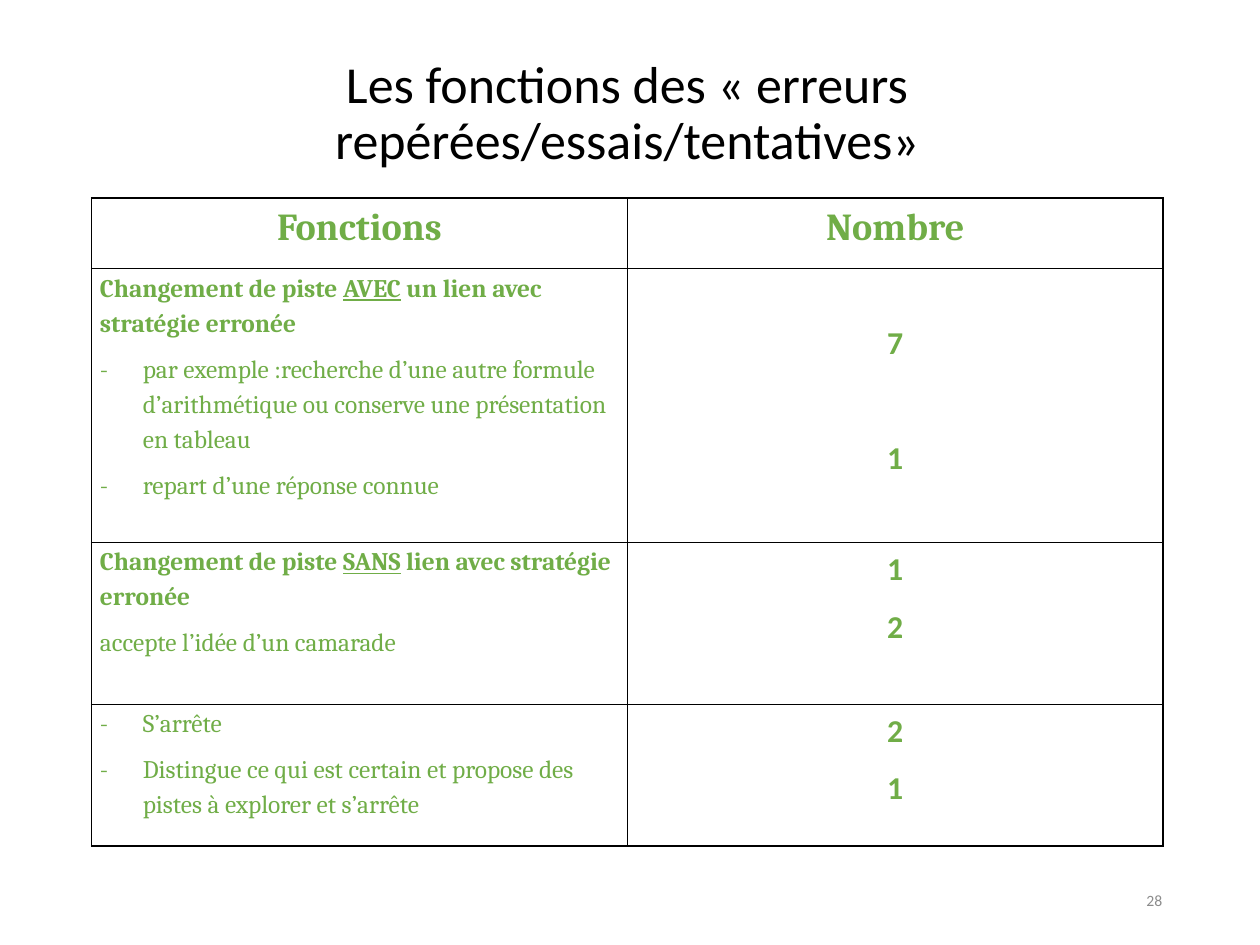
"""Builds the slide on the functions of spotted errors, with its table of counts."""
import pptx
import pptx.dml.color
import pptx.enum.text
import pptx.oxml
import pptx.oxml.ns
import pptx.util
from lxml import etree

Pt = pptx.util.Pt
ALIGN = pptx.enum.text.PP_ALIGN
BLACK = pptx.dml.color.RGBColor(0x00, 0x00, 0x00)
GREEN = pptx.dml.color.RGBColor(0x70, 0xAD, 0x47)
GREY = pptx.dml.color.RGBColor(0x8C, 0x8C, 0x8C)


def add_span(para, text, font, size, color, bold=False, underline=False):
    span = para.add_run()
    span.text = text
    span.font.name = font
    span.font.size = Pt(size)
    span.font.color.rgb = color
    span.font.bold = bold
    span.font.underline = underline


def fill_cell(cell, paras, font, size, align):
    cell.fill.background()
    cell.margin_left = cell.margin_right = Pt(5.4)
    cell.margin_top = cell.margin_bottom = 0
    frame = cell.text_frame
    for index, (kind, spans) in enumerate(paras):
        para = frame.paragraphs[0] if index == 0 else frame.add_paragraph()
        para.alignment = align
        para.line_spacing = 1.2
        para.space_after = Pt(7)
        if kind == "item":
            properties = para._p.get_or_add_pPr()
            properties.set("marL", str(Pt(27)))
            properties.set("indent", str(Pt(-27)))
            bullet_font = etree.SubElement(properties, pptx.oxml.ns.qn("a:buFont"))
            bullet_font.set("typeface", font)
            bullet = etree.SubElement(properties, pptx.oxml.ns.qn("a:buChar"))
            bullet.set("char", "-")
        for number, text in enumerate(spans):
            add_span(para, text, font, size, GREEN, kind == "bold", number == 1)
    cell_properties = cell._tc.get_or_add_tcPr()
    for position, side in enumerate(("lnL", "lnR", "lnT", "lnB")):
        border = pptx.oxml.parse_xml(
            f'<a:{side} {pptx.oxml.ns.nsdecls("a")} w="{Pt(1)}"><a:solidFill>'
            f'<a:srgbClr val="{BLACK}"/></a:solidFill></a:{side}>')
        cell_properties.insert(position, border)


deck = pptx.Presentation()
deck.slide_width = Pt(793.75)
deck.slide_height = Pt(595.25)
page = deck.slides.add_slide(deck.slide_layouts[6])

captions = [
    ("Les fonctions des « erreurs repérées/essais/tentatives»",
     (38.2, 36.3, 714.2, 71.5), 32.7, BLACK, ALIGN.CENTER, 0.9),
    ("28", (560.6, 551.5, 178.6, 31.7), 9.9, GREY, ALIGN.RIGHT, 1.0),
]
for text, place, size, color, align, spacing in captions:
    box = page.shapes.add_textbox(*(Pt(length) for length in place))
    frame = box.text_frame
    frame.word_wrap = True
    frame.vertical_anchor = pptx.enum.text.MSO_ANCHOR.MIDDLE
    para = frame.paragraphs[0]
    para.alignment = align
    para.line_spacing = spacing
    add_span(para, text, "Calibri", size, color)

headings = ["Fonctions", "Nombre"]
functions = [
    ([("bold", ["Changement de piste ", "AVEC", " un lien avec stratégie erronée"]),
      ("item", ["par exemple :recherche d’une autre formule d’arithmétique "
                "ou conserve une présentation en tableau"]),
      ("item", ["repart d’une réponse connue"])], ["7", "1"]),
    ([("bold", ["Changement de piste ", "SANS", " lien avec stratégie erronée"]),
      ("plain", ["accepte l’idée d’un camarade"])], ["1", "2"]),
    ([("item", ["S’arrête"]),
      ("item", ["Distingue ce qui est certain et propose des pistes "
                "à explorer et s’arrête"])], ["2", "1"]),
]
row_heights = [44.7, 172.3, 102, 89.3]
column_width = 337.6

table = page.shapes.add_table(
    len(row_heights), 2, Pt(57.6), Pt(124.6),
    Pt(2 * column_width), Pt(sum(row_heights))).table
table.first_row = False
table.horz_banding = False
for column in table.columns:
    column.width = Pt(column_width)
for row, height in zip(table.rows, row_heights):
    row.height = Pt(height)

for column, heading in enumerate(headings):
    fill_cell(table.cell(0, column), [("bold", [heading])], "Cambria", 24, ALIGN.CENTER)
for row, (paras, counts) in enumerate(functions, start=1):
    fill_cell(table.cell(row, 0), paras, "Cambria", 16, ALIGN.LEFT)
    fill_cell(table.cell(row, 1), [("bold", [count]) for count in counts],
              "Calibri", 20, ALIGN.CENTER)

first_counts = table.cell(1, 1)
first_counts.margin_top = Pt(29.8)
first_counts.text_frame.paragraphs[1].space_before = Pt(36.5)

deck.save("out.pptx")
